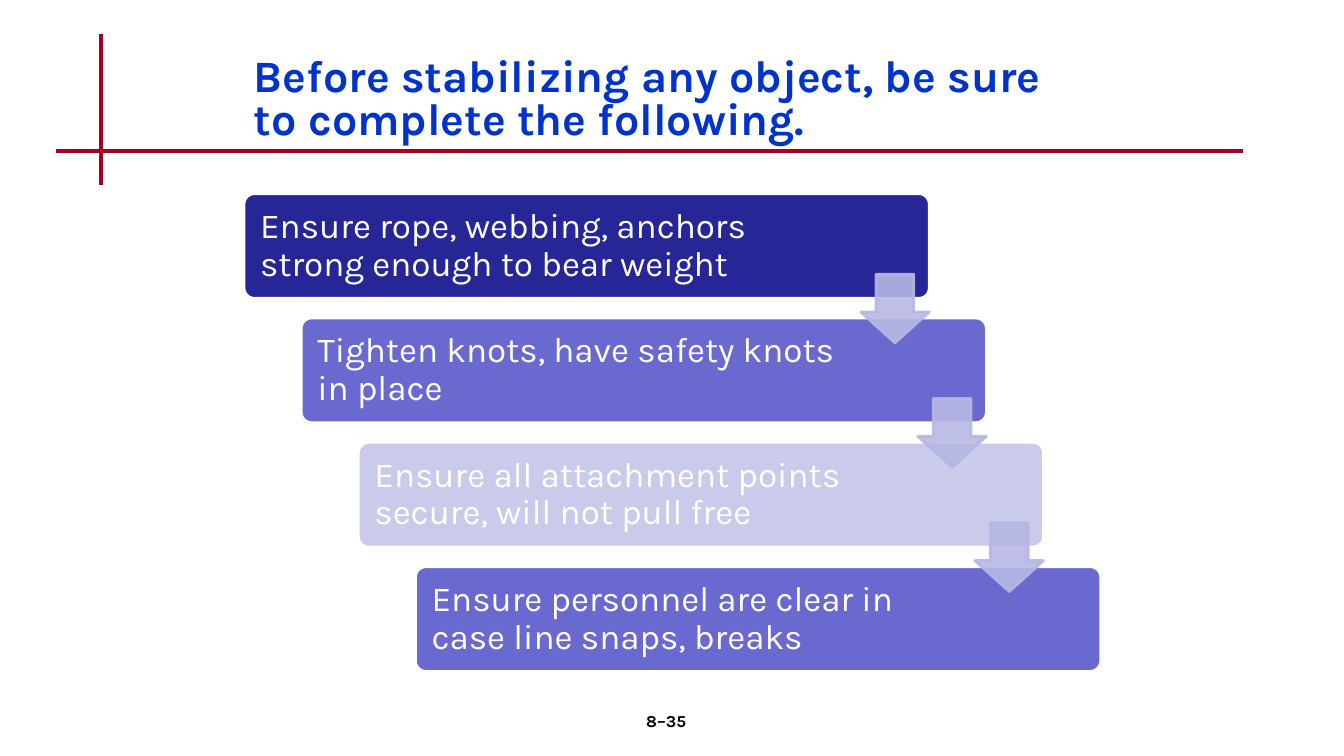
from lxml import etree
from pptx import Presentation
from pptx import util as u
from pptx.dml.color import RGBColor
from pptx.enum import shapes, text
from pptx.oxml.ns import qn

FONT = "Karla"
STEPS = [
    ("Ensure rope, webbing, anchors strong enough to bear weight", "262697"),
    ("Tighten knots, have safety knots in place", "6969CF"),
    ("Ensure all attachment points secure, will not pull free", "CACAEA"),
    ("Ensure personnel are clear in case line snaps, breaks", "6969CF"),
]


def color(value):
    """Turn a hex string into a colour."""
    return RGBColor.from_string(value)


def write(frame, words, size, ink, bold=False, spacing=1.0, align=text.PP_ALIGN.LEFT):
    """Put one styled paragraph into a text frame."""
    frame.word_wrap = True
    paragraph = frame.paragraphs[0]
    paragraph.text = words
    paragraph.alignment = align
    paragraph.line_spacing = spacing
    paragraph.font.name = FONT
    paragraph.font.size = u.Pt(size)
    paragraph.font.bold = bold
    paragraph.font.color.rgb = color(ink)


def paint(shape, fill, line, opacity=100):
    """Give a shape its fill and outline, with no shadow."""
    shape.shadow.inherit = False
    shape.fill.solid()
    shape.fill.fore_color.rgb = color(fill)
    shape.line.color.rgb = color(line)
    shape.line.width = u.Pt(2)
    if opacity < 100:
        for tint in shape.element.spPr.iter(qn("a:srgbClr")):
            etree.SubElement(tint, qn("a:alpha"), val=str(opacity * 1000))


def add_rule(slide, x1, y1, x2, y2):
    """Draw one red rule of the slide frame, in centimetres."""
    rule = slide.shapes.add_connector(
        shapes.MSO_CONNECTOR.STRAIGHT, u.Cm(x1), u.Cm(y1), u.Cm(x2), u.Cm(y2))
    rule.line.color.rgb = color("A50021")
    rule.line.width = u.Pt(3)
    etree.SubElement(rule.element.spPr, qn("a:effectLst"))


def add_heading(slide, left, top, width, height):
    """Place the title in its box."""
    heading = slide.shapes.add_textbox(u.Cm(left), u.Cm(top), u.Cm(width), u.Cm(height))
    heading.text_frame.vertical_anchor = text.MSO_ANCHOR.MIDDLE
    write(heading.text_frame, "Before stabilizing any object, be sure to complete the following.",
          32, "0033CC", bold=True, spacing=0.8)


def add_step(slide, left, top, width, height, words, fill):
    """Draw one step box with its text kept clear of the arrows."""
    step = slide.shapes.add_shape(
        shapes.MSO_SHAPE.ROUNDED_RECTANGLE, u.Cm(left), u.Cm(top), u.Cm(width), u.Cm(height))
    step.adjustments[0] = 0.1
    paint(step, fill, "FFFFFF")
    frame = step.text_frame
    frame.vertical_anchor = text.MSO_ANCHOR.MIDDLE
    frame.margin_left = u.Cm(0.33)
    frame.margin_right = u.Cm(3.5)
    write(frame, words, 25, "FFFFFF", spacing=0.9)


def add_arrow(slide, left, top, size):
    """Draw one translucent arrow leading to the next step."""
    arrow = slide.shapes.add_shape(
        shapes.MSO_SHAPE.DOWN_ARROW, u.Cm(left), u.Cm(top), u.Cm(size), u.Cm(size))
    arrow.adjustments[0] = 0.55
    arrow.adjustments[1] = 0.45
    paint(arrow, "B7B7E5", "B7B7E5", opacity=90)


def add_staircase(slide, left, top, width, height):
    """Lay the steps diagonally across the box, then the arrows between them."""
    step_width, step_height, arrow_size = 17.27, 2.64, 1.73
    gaps = len(STEPS) - 1
    across = (width - step_width) / gaps
    down = (height - step_height) / gaps
    for index, (words, fill) in enumerate(STEPS):
        add_step(slide, left + index * across, top + index * down,
                 step_width, step_height, words, fill)
    for index in range(gaps):
        add_arrow(slide, left + index * across + step_width - arrow_size,
                  top + index * down + 2.03, arrow_size)


def add_page_number(slide, left, top, width, height):
    """Place the centred page number."""
    number = slide.shapes.add_textbox(u.Cm(left), u.Cm(top), u.Cm(width), u.Cm(height))
    write(number.text_frame, "8–35", 12, "000000", bold=True, align=text.PP_ALIGN.CENTER)


def main():
    """Build and save the slide."""
    deck = Presentation()
    deck.slide_width = u.Cm(33.87)
    deck.slide_height = u.Cm(19.05)
    slide = deck.slides.add_slide(deck.slide_layouts[6])
    add_rule(slide, 2.54, 0.85, 2.54, 4.66)
    add_rule(slide, 1.41, 3.81, 31.33, 3.81)
    add_staircase(slide, 6.15, 4.88, 21.59, 12.04)
    add_heading(slide, 6.15, 1.27, 21.59, 2.54)
    add_page_number(slide, 13.26, 17.78, 7.06, 1.27)
    deck.save("out.pptx")


if __name__ == "__main__":
    main()
